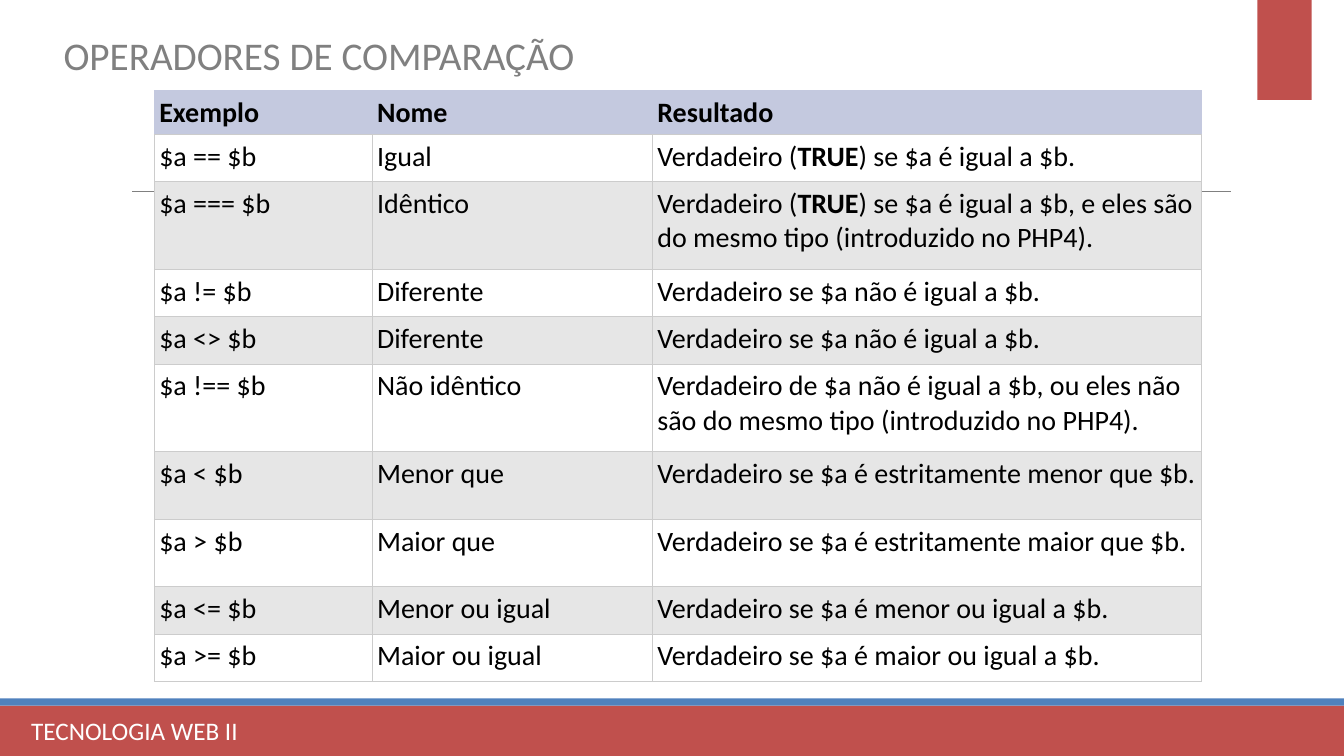
from dataclasses import dataclass

from lxml.etree import SubElement
from pptx import Presentation
from pptx.dml.color import RGBColor
from pptx.enum.shapes import MSO_CONNECTOR, MSO_SHAPE
from pptx.enum.text import MSO_ANCHOR, MSO_AUTO_SIZE, PP_ALIGN
from pptx.oxml.ns import qn
from pptx.util import Inches, Pt


@dataclass(frozen=True)
class Theme:
    font: str = "Calibri"
    red: str = "C0504D"
    blue: str = "4F81BD"
    gray: str = "808080"
    white: str = "FFFFFF"
    black: str = "000000"
    head: str = "C4C9DF"
    band: str = "E6E6E6"
    grid: str = "CCCCCC"
    title: int = 28
    cell: int = 20
    foot: int = 18


THEME = Theme()
WIDTH, HEIGHT = 13.33, 7.5
COLS = [2.16, 2.78, 5.45]
ROWS = [
    (0.39, "*Exemplo*", "*Nome*", "*Resultado*"),
    (0.47, "$a == $b", "Igual", "Verdadeiro (*TRUE*) se $a é igual a $b."),
    (0.87, "$a === $b", "Idêntico",
     "Verdadeiro (*TRUE*) se $a é igual a $b, e eles são do mesmo tipo (introduzido no PHP4)."),
    (0.47, "$a != $b", "Diferente", "Verdadeiro se $a não é igual a $b."),
    (0.47, "$a <> $b", "Diferente", "Verdadeiro se $a não é igual a $b."),
    (0.87, "$a !== $b", "Não idêntico",
     "Verdadeiro de $a não é igual a $b, ou eles não são do mesmo tipo (introduzido no PHP4)."),
    (0.67, "$a < $b", "Menor que", "Verdadeiro se $a é estritamente menor que $b."),
    (0.67, "$a > $b", "Maior que", "Verdadeiro se $a é estritamente maior que $b."),
    (0.47, "$a <= $b", "Menor ou igual", "Verdadeiro se $a é menor ou igual a $b."),
    (0.47, "$a >= $b", "Maior ou igual", "Verdadeiro se $a é maior ou igual a $b."),
]


def color(code):
    return RGBColor.from_string(code)


def style(font, size, code, bold=False):
    font.name = THEME.font
    font.size = Pt(size)
    font.bold = bold
    font.color.rgb = color(code)


def block(slide, box, code):
    shape = slide.shapes.add_shape(MSO_SHAPE.RECTANGLE, *map(Inches, box))
    shape.shadow.inherit = False
    shape.fill.solid()
    shape.fill.fore_color.rgb = color(code)
    shape.line.fill.background()


def rule(slide, left, top, width):
    line = slide.shapes.add_connector(
        MSO_CONNECTOR.STRAIGHT, Inches(left), Inches(top), Inches(left + width), Inches(top))
    line.line.color.rgb = color(THEME.gray)
    line.line.width = Pt(0.5)
    SubElement(line.element.spPr, qn("a:effectLst"))


def footer(slide, left, top, width, height, text):
    strip = 0.07
    block(slide, (left, top + strip, width, height - strip), THEME.red)
    block(slide, (left, top, width, strip), THEME.blue)
    label = slide.shapes.add_textbox(
        Inches(left + 0.21), Inches(top + 0.12), Inches(7.11), Inches(0.4))
    label.text_frame.word_wrap = True
    label.text_frame.text = text
    style(label.text_frame.paragraphs[0].runs[0].font, THEME.foot, THEME.white)


def heading(slide, box, text):
    title = slide.shapes.title
    title.left, title.top, title.width, title.height = map(Inches, box)
    frame = title.text_frame
    frame.text = text
    frame.word_wrap = True
    frame.auto_size = MSO_AUTO_SIZE.NONE
    frame.vertical_anchor = MSO_ANCHOR.TOP
    frame.paragraphs[0].alignment = PP_ALIGN.LEFT
    style(frame.paragraphs[0].runs[0].font, THEME.title, THEME.gray)


def border(cell, codes):
    props = cell._tc.get_or_add_tcPr()
    for side, code in zip("LRTB", codes):
        edge = SubElement(props, qn("a:ln" + side), w=str(Pt(0.75)))
        fill = SubElement(edge, qn("a:solidFill"))
        SubElement(fill, qn("a:srgbClr"), val=code)


def fill_cell(cell, text, fill, edges):
    cell.margin_left = cell.margin_right = Inches(0.05)
    cell.margin_top = cell.margin_bottom = Inches(0.05)
    border(cell, edges)
    cell.fill.solid()
    cell.fill.fore_color.rgb = color(fill)
    para = cell.text_frame.paragraphs[0]
    for part, words in enumerate(text.split("*")):
        if words:
            run = para.add_run()
            run.text = words
            style(run.font, THEME.cell, THEME.black, part % 2 == 1)


def grid(slide, left, top, rows, cols):
    width, height = sum(cols), sum(row[0] for row in rows)
    table = slide.shapes.add_table(
        len(rows), len(cols), *map(Inches, (left, top, width, height))).table
    table.horz_banding = False
    for col, size in zip(table.columns, cols):
        col.width = Inches(size)
    for index, (size, *texts) in enumerate(rows):
        table.rows[index].height = Inches(size)
        fill, edges = (THEME.white, THEME.band)[index % 2 == 0], [THEME.grid] * 4
        if index == 0:
            fill, edges = THEME.head, [THEME.head] * 3 + [THEME.grid]
        for cell, text in zip(table.rows[index].cells, texts):
            fill_cell(cell, text, fill, edges)


def main():
    deck = Presentation()
    deck.slide_width, deck.slide_height = Inches(WIDTH), Inches(HEIGHT)
    slide = deck.slides.add_slide(deck.slide_layouts[5])
    slide.background.fill.solid()
    slide.background.fill.fore_color.rgb = color(THEME.white)
    rule(slide, 1.31, 1.9, 10.9)
    footer(slide, 0, 6.93, WIDTH, 0.57, "TECNOLOGIA WEB II")
    block(slide, (12.47, 0, 0.54, 0.99), THEME.red)
    heading(slide, (0.53, 0.26, 5.5, 0.57), "OPERADORES DE COMPARAÇÃO")
    grid(slide, 1.53, 0.9, ROWS, COLS)
    deck.save("out.pptx")


if __name__ == "__main__":
    main()
